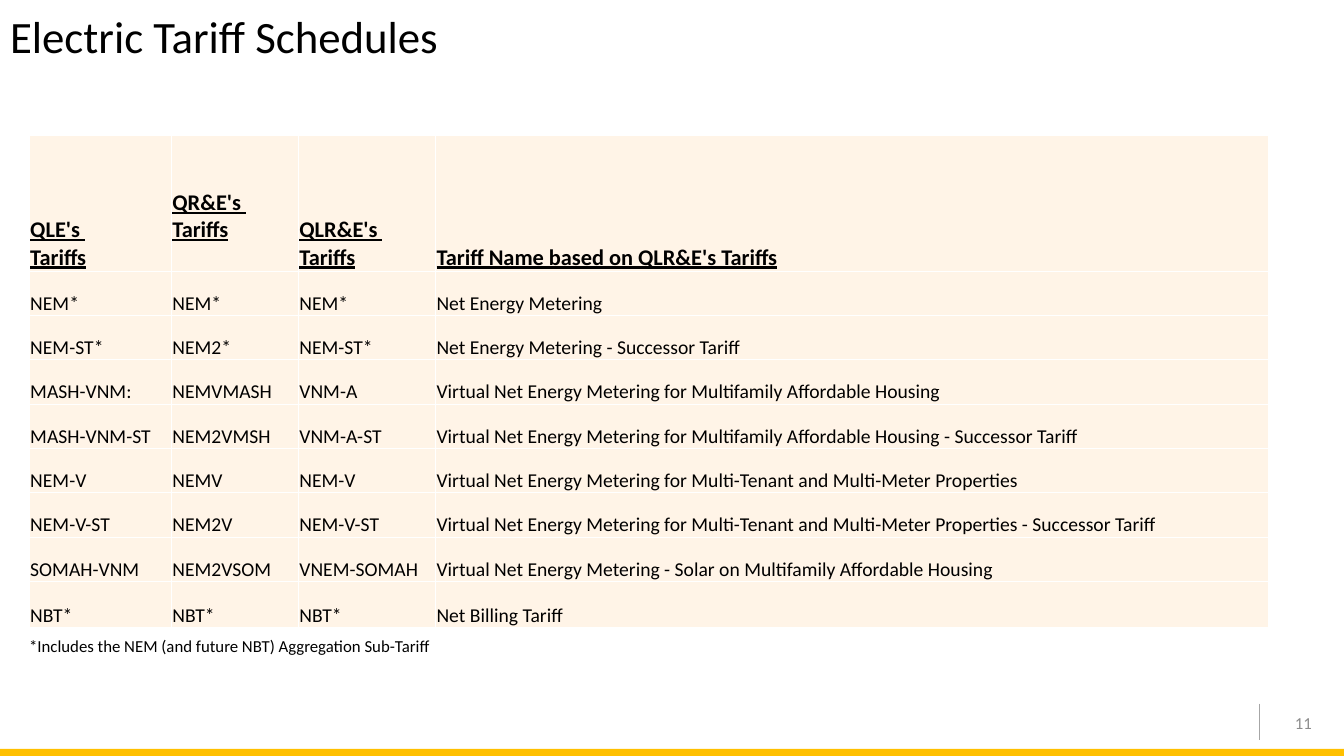
from dataclasses import dataclass

from lxml.etree import SubElement
from pptx import Presentation
from pptx.dml.color import RGBColor
from pptx.enum.shapes import MSO_CONNECTOR, MSO_SHAPE
from pptx.enum.text import MSO_ANCHOR, MSO_AUTO_SIZE, PP_ALIGN
from pptx.oxml.ns import qn
from pptx.util import Inches, Pt

FONT = "Calibri"
BLACK, GREY, WHITE = "000000", "8C8C8C", "FFFFFF"
RULE_GREY, GOLD, CREAM = "A6A6A6", "FFC000", "FFF4E7"


@dataclass
class Heading:
    lines: list[str]
    bottom: float = 0


@dataclass
class TextBox:
    text: str
    left: float
    top: float
    width: float
    height: float
    color: str = BLACK
    align: PP_ALIGN = PP_ALIGN.LEFT
    anchor: MSO_ANCHOR = MSO_ANCHOR.TOP


HEADINGS = [
    Heading(["QLE's ", "Tariffs"]),
    Heading(["QR&E's ", "Tariffs"], bottom=0.27),
    Heading(["QLR&E's ", "Tariffs"]),
    Heading(["Tariff Name based on QLR&E's Tariffs"]),
]
TARIFFS = [
    ("NEM*", "NEM*", "NEM*", "Net Energy Metering"),
    ("NEM-ST*", "NEM2*", "NEM-ST*", "Net Energy Metering - Successor Tariff"),
    ("MASH-VNM:", "NEMVMASH", "VNM-A",
     "Virtual Net Energy Metering for Multifamily Affordable Housing"),
    ("MASH-VNM-ST", "NEM2VMSH", "VNM-A-ST",
     "Virtual Net Energy Metering for Multifamily Affordable Housing - Successor Tariff"),
    ("NEM-V", "NEMV", "NEM-V",
     "Virtual Net Energy Metering for Multi-Tenant and Multi-Meter Properties"),
    ("NEM-V-ST", "NEM2V", "NEM-V-ST",
     "Virtual Net Energy Metering for Multi-Tenant and Multi-Meter Properties - Successor Tariff"),
    ("SOMAH-VNM", "NEM2VSOM", "VNEM-SOMAH",
     "Virtual Net Energy Metering - Solar on Multifamily Affordable Housing"),
    ("NBT*", "NBT*", "NBT*", "Net Billing Tariff"),
]
COLUMN_WIDTHS = [1.41, 1.26, 1.36, 8.26]
ROW_HEIGHTS = [1.35] + [0.44] * 7 + [0.46]
TEXT_BOXES = [
    TextBox("11", 12.36, 6.97, 0.75, 0.4, GREY, PP_ALIGN.RIGHT, MSO_ANCHOR.MIDDLE),
    TextBox("*Includes the NEM (and future NBT) Aggregation Sub-Tariff",
            0.19, 6.26, 4.65, 0.3),
]


def rgb(color: str) -> RGBColor:
    return RGBColor.from_string(color)


def add_span(para, text: str, size: float, color: str = BLACK, heading: bool = False) -> None:
    span = para.add_run()
    span.text = text
    font = span.font
    font.name, font.size = FONT, Pt(size)
    font.bold = font.underline = heading
    font.color.rgb = rgb(color)


def add_master_marks(page) -> None:
    """Draw the rule beside the page number and the bar along the bottom."""
    rule = page.shapes.add_connector(
        MSO_CONNECTOR.STRAIGHT, Inches(12.49), Inches(6.98), Inches(12.49), Inches(7.34))
    rule.line.color.rgb = rgb(RULE_GREY)
    rule.line.width = Pt(1)
    SubElement(rule._element.spPr, qn("a:effectLst"))
    bar = page.shapes.add_shape(
        MSO_SHAPE.RECTANGLE, 0, Inches(7.43), Inches(13.33), Inches(0.08))
    bar.shadow.inherit = False
    bar.fill.solid()
    bar.fill.fore_color.rgb = rgb(GOLD)
    bar.line.fill.background()


def set_title(page, text: str) -> None:
    title = page.shapes.title
    title.left, title.top = Inches(0), Inches(0)
    title.width, title.height = Inches(11.5), Inches(0.78)
    frame = title.text_frame
    frame.auto_size = MSO_AUTO_SIZE.NONE
    frame.vertical_anchor = MSO_ANCHOR.MIDDLE
    para = frame.paragraphs[0]
    para.alignment = PP_ALIGN.LEFT
    para.line_spacing = 0.9
    add_span(para, text, 32)


def add_text_box(page, item: TextBox) -> None:
    box = page.shapes.add_textbox(
        Inches(item.left), Inches(item.top), Inches(item.width), Inches(item.height))
    frame = box.text_frame
    frame.word_wrap = True
    frame.vertical_anchor = item.anchor
    para = frame.paragraphs[0]
    para.alignment = item.align
    add_span(para, item.text, 12, item.color)


def fill_cell(cell, lines: list[str], size: float, heading: bool, bottom: float = 0) -> None:
    cell.vertical_anchor = MSO_ANCHOR.BOTTOM
    cell.margin_left = cell.margin_right = cell.margin_top = Inches(0.01)
    cell.margin_bottom = Inches(bottom)
    frame = cell.text_frame
    for index, line in enumerate(lines):
        para = frame.add_paragraph() if index else frame.paragraphs[0]
        add_span(para, line, size, heading=heading)
    properties = cell._tc.get_or_add_tcPr()
    for side in ("a:lnL", "a:lnR", "a:lnT", "a:lnB"):
        border = SubElement(properties, qn(side), w=str(Pt(1)))
        SubElement(SubElement(border, qn("a:solidFill")), qn("a:srgbClr"), val=WHITE)
    cell.fill.solid()
    cell.fill.fore_color.rgb = rgb(CREAM)


def add_tariff_table(page) -> None:
    table = page.shapes.add_table(
        len(ROW_HEIGHTS), len(COLUMN_WIDTHS), Inches(0.29), Inches(1.34),
        Inches(sum(COLUMN_WIDTHS)), Inches(sum(ROW_HEIGHTS))).table
    for column, width in zip(table.columns, COLUMN_WIDTHS):
        column.width = Inches(width)
    for row, height in zip(table.rows, ROW_HEIGHTS):
        row.height = Inches(height)
    for column, heading in enumerate(HEADINGS):
        fill_cell(table.cell(0, column), heading.lines, 16, True, heading.bottom)
    for row, tariff in enumerate(TARIFFS, start=1):
        for column, text in enumerate(tariff):
            fill_cell(table.cell(row, column), [text], 14, False)


def main() -> None:
    deck = Presentation()
    deck.slide_width, deck.slide_height = Inches(13.33), Inches(7.5)
    page = deck.slides.add_slide(deck.slide_layouts.get_by_name("Title Only"))
    add_master_marks(page)
    set_title(page, "Electric Tariff Schedules")
    add_tariff_table(page)
    for item in TEXT_BOXES:
        add_text_box(page, item)
    deck.save("out.pptx")


if __name__ == "__main__":
    main()
